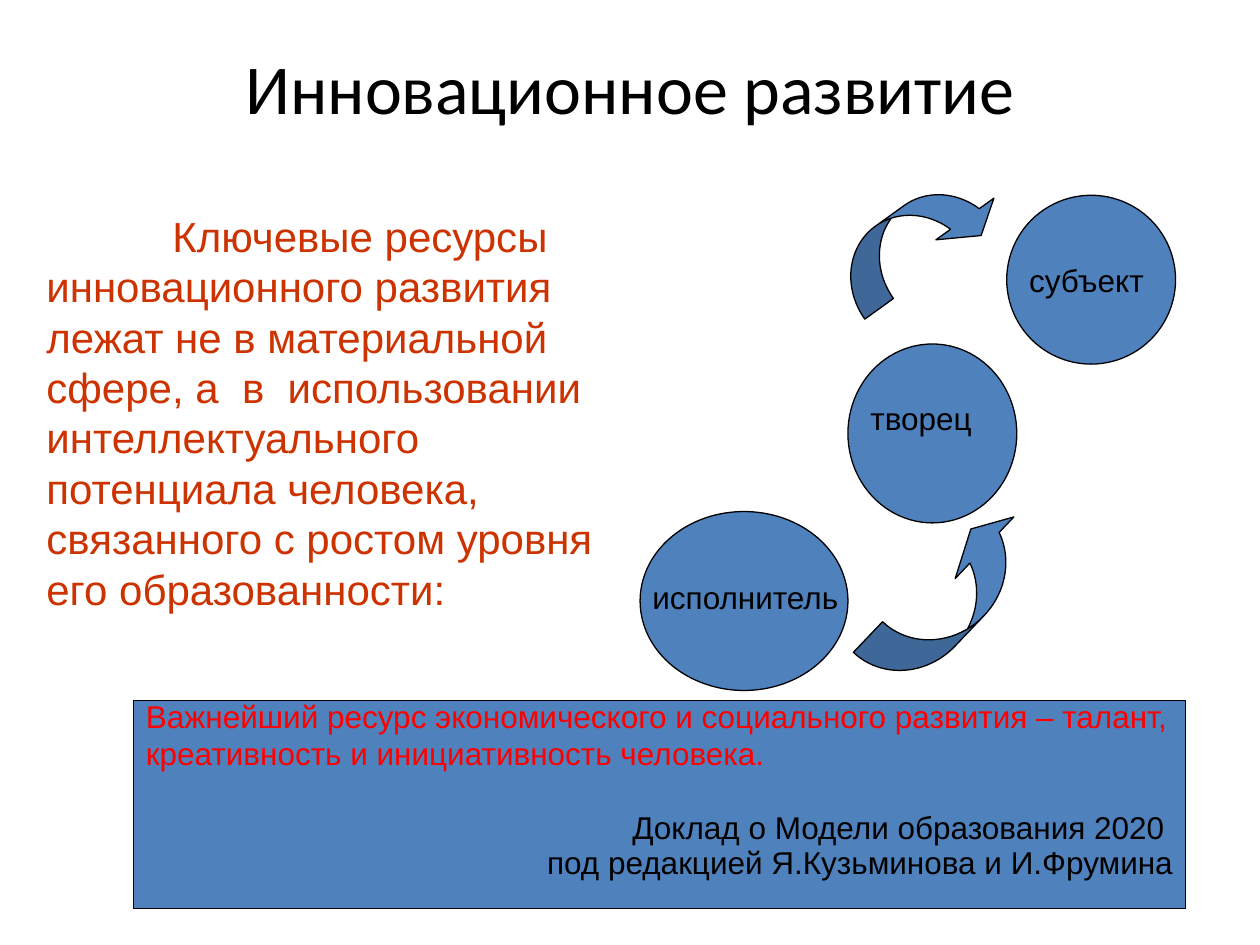
"""Build the slide on innovative development with three roles and a quotation."""
import pptx
import pptx.util
import pptx.dml.color
import pptx.enum.shapes
import pptx.enum.text

Inches, Pt = pptx.util.Inches, pptx.util.Pt
RGBColor = pptx.dml.color.RGBColor
SHAPE = pptx.enum.shapes.MSO_SHAPE
ALIGN = pptx.enum.text.PP_ALIGN
ANCHOR = pptx.enum.text.MSO_ANCHOR

BLACK = RGBColor(0x00, 0x00, 0x00)
BLUE = RGBColor(0x4F, 0x81, 0xBD)
RUST = RGBColor(0xCC, 0x33, 0x00)
RED = RGBColor(0xFF, 0x00, 0x00)

deck = pptx.Presentation()
deck.slide_width, deck.slide_height = Inches(10), Inches(7.5)
page = deck.slides.add_slide(deck.slide_layouts[6])


def add_figure(kind, place, rotation=0, adjustments=()):
    figure = page.shapes.add_shape(kind, *map(Inches, place))
    figure.shadow.inherit = False
    figure.fill.solid()
    figure.fill.fore_color.rgb = BLUE
    figure.line.color.rgb = BLACK
    figure.line.width = Pt(0.75)
    figure.rotation = rotation
    for index, value in enumerate(adjustments):
        figure.adjustments[index] = value


def add_text(place, lines, anchor=ANCHOR.TOP):
    box = page.shapes.add_textbox(*map(Inches, place))
    frame = box.text_frame
    frame.word_wrap = True
    frame.vertical_anchor = anchor
    for index, (words, color, font_format, para_format) in enumerate(lines):
        para = frame.add_paragraph() if index else frame.paragraphs[0]
        for name, value in para_format.items():
            setattr(para, name, value)
        span = para.add_run()
        span.text = words
        span.font.color.rgb = color
        for name, value in font_format.items():
            setattr(span.font, name, value)
    return box


title_font = {"name": "Calibri", "size": Pt(40)}
thesis_font = {"name": "Arial", "size": Pt(24)}
body_font = {"name": "Arial", "size": Pt(18)}

add_text((0.5, 0.3, 9, 0.77),
         [("Инновационное развитие", BLACK, title_font, {"alignment": ALIGN.CENTER})],
         ANCHOR.MIDDLE)

thesis = add_text((0.27, 1.62, 4.65, 3.3), [(
    "Ключевые ресурсы инновационного развития лежат не в материальной сфере, "
    "а  в  использовании интеллектуального потенциала человека, "
    "связанного с ростом уровня его образованности:", RUST, thesis_font, {})])
thesis_para = thesis.text_frame.paragraphs[0]
thesis_para._p.get_or_add_pPr().set("indent", str(Inches(1)))

add_figure(SHAPE.RECTANGLE, (1.06, 5.56, 8.35, 1.65))
source_format = {"alignment": ALIGN.RIGHT, "line_spacing": 0.5}
add_text((1.06, 5.48, 8.35, 1.61), [
    ("Важнейший ресурс экономического и социального развития – талант, "
     "креативность и инициативность человека.", RED, body_font, {}),
    ("Доклад о Модели образования 2020 ", BLACK, body_font,
     {**source_format, "space_before": Pt(30)}),
    ("под редакцией Я.Кузьминова и И.Фрумина", BLACK, body_font,
     {**source_format, "space_before": Pt(9)}),
])

roles = [
    ("исполнитель", (5.08, 4.06, 1.65, 1.42), (5.08, 4.54, 1.73, 0.4)),
    ("творец", (6.73, 2.73, 1.34, 1.42), (6.81, 3.12, 1.4, 0.4)),
    ("субъект", (7.99, 1.55, 1.34, 1.34), (8.07, 2.02, 1.26, 0.4)),
]
for role, circle_place, label_place in roles:
    add_figure(SHAPE.OVAL, circle_place)
    add_text(label_place, [(role, BLACK, body_font, {})])

add_figure(SHAPE.CURVED_UP_ARROW, (6.71, 4.48, 1.69, 0.55), 313.6, (0.61, 1.23, 0.33))
add_figure(SHAPE.CURVED_DOWN_ARROW, (6.57, 1.62, 1.42, 0.55), 324.3, (0.51, 1.03, 0.33))

deck.save("out.pptx")
